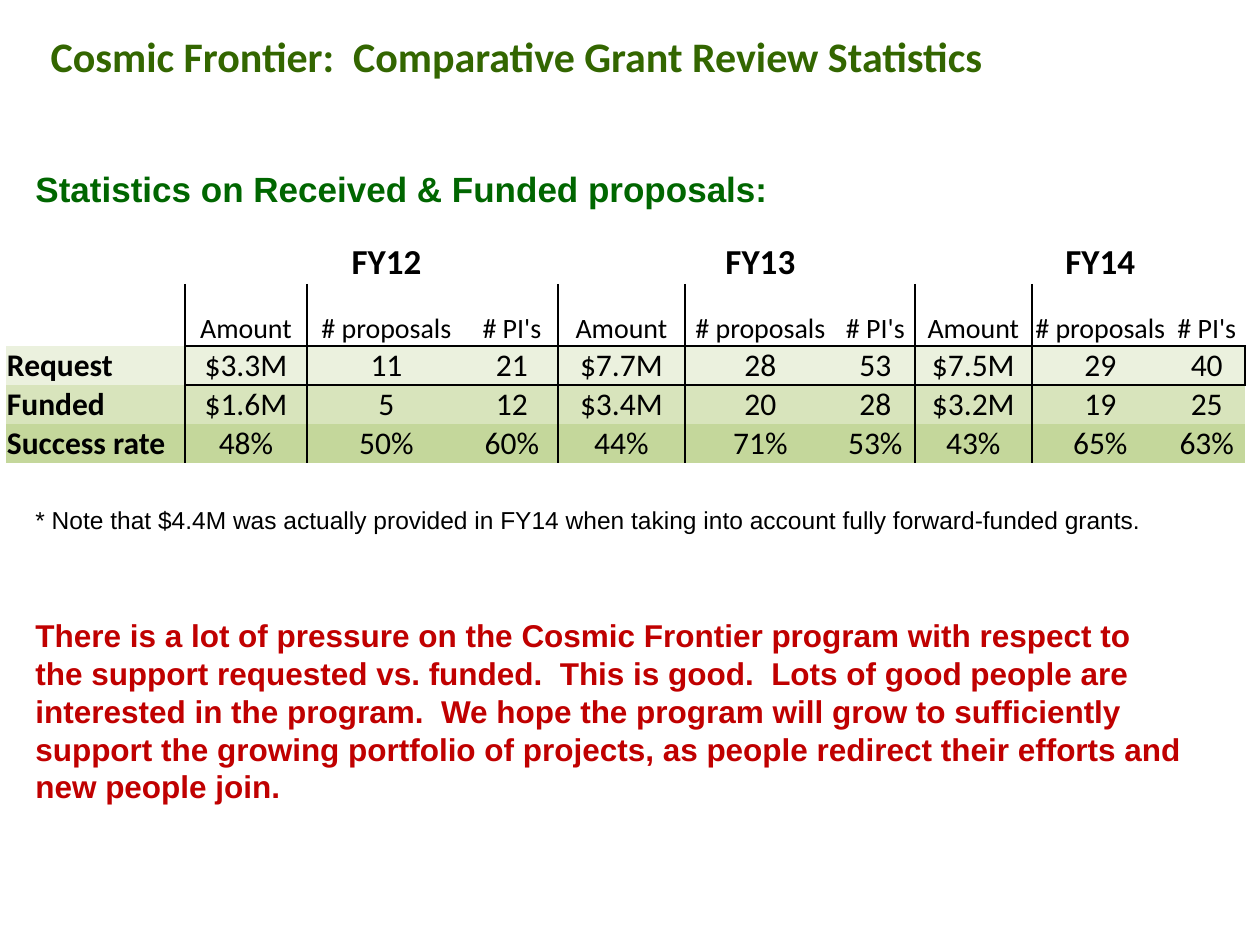
import pptx
import pptx.dml.color
import pptx.enum.text
import pptx.oxml
import pptx.oxml.ns
import pptx.util

RGBColor = pptx.dml.color.RGBColor
PP_ALIGN = pptx.enum.text.PP_ALIGN
MSO_ANCHOR = pptx.enum.text.MSO_ANCHOR

BLACK = RGBColor(0x00, 0x00, 0x00)
TITLE_GREEN = RGBColor(0x33, 0x66, 0x00)
HEADING_GREEN = RGBColor(0x00, 0x66, 0x00)
RED = RGBColor(0xC0, 0x00, 0x00)
ROW_FILLS = [
    RGBColor(0xEB, 0xF1, 0xDE),
    RGBColor(0xD8, 0xE4, 0xBC),
    RGBColor(0xC4, 0xD7, 0x9B),
]
EMU_PER_PX = 914400 / 126
NO_STYLE = "{2D5ABB26-0587-4C30-8999-92F81FD0307C}"


def px(*values):
    return [pptx.util.Emu(round(v * EMU_PER_PX)) for v in values]


def write(tf, text, size=18, font="Calibri", color=BLACK, bold=False, align=PP_ALIGN.LEFT):
    p = tf.paragraphs[0]
    p.alignment = align
    r = p.add_run()
    r.text = text
    r.font.size = pptx.util.Pt(size)
    r.font.name = font
    r.font.color.rgb = color
    r.font.bold = bold


prs = pptx.Presentation()
prs.slide_width, prs.slide_height = px(1260, 945)
s = prs.slides.add_slide(prs.slide_layouts[5])

title = s.shapes.title
title.left, title.top, title.width, title.height = px(38, 24, 1207, 63)
tf = title.text_frame
tf.word_wrap = True
tf.auto_size = pptx.enum.text.MSO_AUTO_SIZE.NONE
tf.vertical_anchor = MSO_ANCHOR.TOP
write(tf, "Cosmic Frontier:  Comparative Grant Review Statistics",
      size=24, color=TITLE_GREEN, bold=True)

texts = [
    ((23, 161, 814, 55), "Statistics on Received & Funded proposals:", 20, HEADING_GREEN, True),
    ((23, 499, 1174, 43),
     "* Note that $4.4M was actually provided in FY14 when taking into account "
     "fully forward-funded grants.", 14, BLACK, False),
    ((23, 610, 1174, 204),
     "There is a lot of pressure on the Cosmic Frontier program with respect to the support "
     "requested vs. funded.  This is good.  Lots of good people are interested in the program.  "
     "We hope the program will grow to sufficiently support the growing portfolio of projects, "
     "as people redirect their efforts and new people join.", 18, RED, True),
]
for box, text, size, color, bold in texts:
    tf = s.shapes.add_textbox(*px(*box)).text_frame
    tf.word_wrap = True
    write(tf, text, size=size, font="Arial", color=color, bold=bold)

col_widths = [179, 122, 159, 92, 127, 151, 79, 117, 137, 76]
row_heights = [50, 62, 39, 39, 39]
rows = [
    ["", "", "FY12", "", "", "FY13", "", "", "FY14", ""],
    [""] + ["Amount", "# proposals", "# PI's"] * 3,
    ["Request", "$3.3M", "11", "21", "$7.7M", "28", "53", "$7.5M", "29", "40"],
    ["Funded", "$1.6M", "5", "12", "$3.4M", "20", "28", "$3.2M", "19", "25"],
    ["Success rate", "48%", "50%", "60%", "44%", "71%", "53%", "43%", "65%", "63%"],
]
last_col = len(col_widths) - 1
frame = s.shapes.add_table(len(rows), len(col_widths),
                           *px(6, 234, sum(col_widths), sum(row_heights)))
table = frame.table
table.first_row = False
table.horz_banding = False
table._tbl.tblPr.find(pptx.oxml.ns.qn("a:tableStyleId")).text = NO_STYLE
for column, width in zip(table.columns, px(*col_widths)):
    column.width = width
for row, height in zip(table.rows, px(*row_heights)):
    row.height = height

for i, values in enumerate(rows):
    for j, value in enumerate(values):
        cell = table.cell(i, j)
        cell.vertical_anchor = MSO_ANCHOR.BOTTOM
        cell.margin_left, cell.margin_right, cell.margin_top, cell.margin_bottom = px(1, 1, 1, 0)
        if value:
            write(cell.text_frame, value, size=[20, 16, 18, 18, 18][i],
                  bold=i == 0 or j == 0,
                  align=PP_ALIGN.CENTER if j else PP_ALIGN.LEFT)
        borders = {
            "lnL": i > 0 and j % 3 == 1,
            "lnR": i > 0 and j % 3 == 0 and j < last_col or (i, j) == (2, last_col),
            "lnT": i == 2 and j > 0,
            "lnB": i == 1 and j > 0,
        }
        for tag, shown in borders.items():
            if shown:
                cell._tc.get_or_add_tcPr().append(pptx.oxml.parse_xml(
                    f'<a:{tag} {pptx.oxml.ns.nsdecls("a")} w="12700"><a:solidFill>'
                    f'<a:srgbClr val="{BLACK}"/></a:solidFill></a:{tag}>'))
        if i < 2:
            cell.fill.background()
        else:
            cell.fill.solid()
            cell.fill.fore_color.rgb = ROW_FILLS[i - 2]

prs.save("out.pptx")
